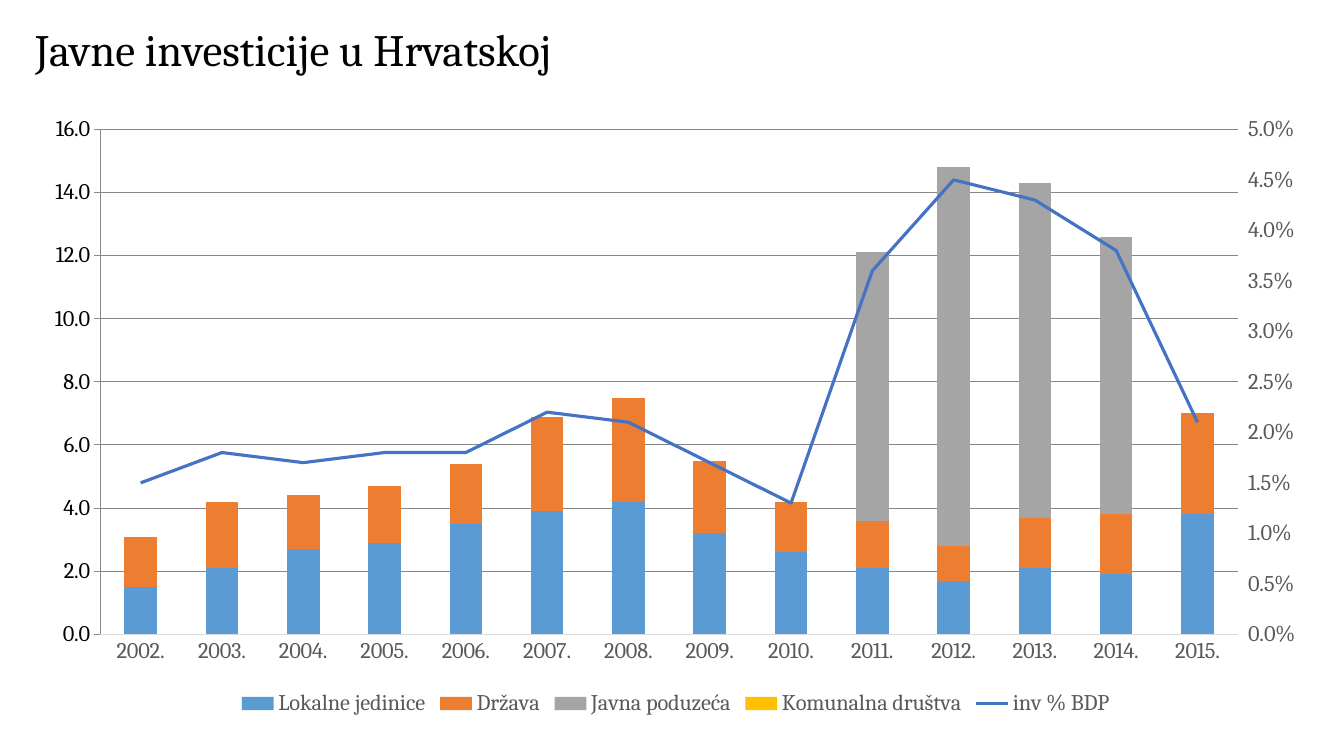
import copy

import pptx
import pptx.chart.axis
import pptx.chart.data
import pptx.dml.color
import pptx.enum.chart
import pptx.enum.text
import pptx.oxml
import pptx.oxml.ns
import pptx.util

Cm, Pt = pptx.util.Cm, pptx.util.Pt
RGB = pptx.dml.color.RGBColor
XL = pptx.enum.chart
qn = pptx.oxml.ns.qn

BLACK = RGB(0x00, 0x00, 0x00)
GRAY = RGB(0x59, 0x59, 0x59)
GRID = RGB(0xD9, 0xD9, 0xD9)
LINE = RGB(0x44, 0x72, 0xC4)
FONT = "Cambria"

YEARS = [f"{year}." for year in range(2002, 2016)]
# Stacked columns: name, fill colour, values
COLUMNS = [
    ("Lokalne jedinice", RGB(0x5B, 0x9B, 0xD5),
     [1.5, 2.1, 2.7, 2.9, 3.5, 3.9, 4.2, 3.2, 2.6, 2.1, 1.7, 2.1, 1.9, 3.8]),
    ("Država", RGB(0xED, 0x7D, 0x31),
     [1.6, 2.1, 1.7, 1.8, 1.9, 3, 3.3, 2.3, 1.6, 1.5, 1.1, 1.6, 1.9, 3.2]),
    ("Javna poduzeća", RGB(0xA5, 0xA5, 0xA5),
     [0] * 9 + [8.5, 12, 10.6, 8.8, 0]),
    ("Komunalna društva", RGB(0xFF, 0xC0, 0x00), [None] * len(YEARS)),
]
GDP_SHARE = [0.015, 0.018, 0.017, 0.018, 0.018, 0.022, 0.021,
             0.017, 0.013, 0.036, 0.045, 0.043, 0.038, 0.021]

LINE_CHART = f"""<c:lineChart {pptx.oxml.ns.nsdecls("c")}>
  <c:grouping val="standard"/><c:varyColors val="0"/>
  <c:marker val="1"/><c:axId val="5001"/><c:axId val="5002"/>
</c:lineChart>"""
PLOT_LAYOUT = f"""<c:layout {pptx.oxml.ns.nsdecls("c")}><c:manualLayout>
  <c:layoutTarget val="inner"/><c:xMode val="edge"/><c:yMode val="edge"/>
  <c:x val="0.05"/><c:y val="0.04"/><c:w val="0.89"/><c:h val="0.82"/>
</c:manualLayout></c:layout>"""


def apply(obj, values):
    for name, value in values.items():
        setattr(obj, name, value)


def format_font(font, size, color):
    apply(font, {"name": FONT, "size": Pt(size), "bold": False})
    font.color.rgb = color


def remove_children(parent, tag):
    for child in parent.findall(qn(tag)):
        parent.remove(child)


def add_title(s, left, top, width, height):
    sp = s.shapes.title
    apply(sp, {"left": left, "top": top, "width": width, "height": height})
    tf = sp.text_frame
    tf.text = "Javne investicije u Hrvatskoj"
    apply(tf, {"vertical_anchor": pptx.enum.text.MSO_ANCHOR.MIDDLE,
               "word_wrap": True})
    p = tf.paragraphs[0]
    apply(p, {"alignment": pptx.enum.text.PP_ALIGN.LEFT, "line_spacing": 0.9})
    format_font(p.runs[0].font, 32, BLACK)


def move_last_series_to_line(chart):
    """Turn the last column series into a line and return its value axis."""
    area = chart._chartSpace.find(f"{qn('c:chart')}/{qn('c:plotArea')}")
    bars = area.find(qn("c:barChart"))
    line = pptx.oxml.parse_xml(LINE_CHART)
    ser = bars.findall(qn("c:ser"))[-1]
    remove_children(ser, "c:invertIfNegative")
    line.find(qn("c:varyColors")).addnext(ser)
    bars.addnext(line)

    # Second pair of axes, with the category axis hidden
    cat, val = (copy.deepcopy(area.find(qn(tag)))
                for tag in ("c:catAx", "c:valAx"))
    for ax, own, other in ((cat, "5001", "5002"), (val, "5002", "5001")):
        ax.find(qn("c:axId")).set("val", own)
        ax.find(qn("c:crossAx")).set("val", other)
    val.find(qn("c:axPos")).set("val", "r")
    val.find(qn("c:crosses")).set("val", "max")
    area.find(qn("c:valAx")).addnext(val)
    val.addnext(cat)
    pptx.chart.axis.CategoryAxis(cat).visible = False

    # Fixed plot area
    remove_children(area, "c:layout")
    area.insert(0, pptx.oxml.parse_xml(PLOT_LAYOUT))
    return pptx.chart.axis.ValueAxis(val)


def format_axis(axis, tick, number_format=None, scale=None):
    apply(axis, {"major_tick_mark": tick,
                 "minor_tick_mark": XL.XL_TICK_MARK.NONE})
    format_font(axis.tick_labels.font, 16, GRAY)
    axis.format.line.fill.background()
    if number_format:
        apply(axis.tick_labels, {"number_format": number_format,
                                 "number_format_is_linked": False})
        apply(axis, dict(zip(
            ("minimum_scale", "maximum_scale", "major_unit"), scale)))


def format_rule(line):
    line.color.rgb = GRID
    line.width = Pt(0.75)


def add_investment_chart(s, left, top, width, height):
    data = pptx.chart.data.CategoryChartData(number_format="#,##0.0")
    data.categories = YEARS
    for name, _, values in COLUMNS:
        data.add_series(name, values)
    data.add_series("inv % BDP", GDP_SHARE, number_format="0.0%")
    chart = s.shapes.add_chart(XL.XL_CHART_TYPE.COLUMN_STACKED,
                               left, top, width, height, data).chart
    chart.has_title = False
    format_font(chart.font, 16, BLACK)
    right_axis = move_last_series_to_line(chart)

    # Series
    columns, line = chart.plots
    apply(columns, {"gap_width": 150, "overlap": 100,
                    "vary_by_categories": False})
    for series, (_, color, _) in zip(columns.series, COLUMNS):
        series.format.fill.solid()
        series.format.fill.fore_color.rgb = color
    share = line.series[0]
    share.smooth = False
    share.marker.style = XL.XL_MARKER_STYLE.NONE
    share.format.line.color.rgb = LINE
    share.format.line.width = Pt(2.25)

    # Axes
    tick = XL.XL_TICK_MARK
    format_axis(chart.category_axis, tick.NONE)
    format_axis(chart.value_axis, tick.NONE, "#,##0.0", (0, 16, 2))
    format_axis(right_axis, tick.OUTSIDE, "0.0%", (0, 0.05, 0.005))
    right_axis.has_major_gridlines = False
    format_rule(chart.category_axis.format.line)
    format_rule(chart.value_axis.major_gridlines.format.line)

    # Legend
    chart.has_legend = True
    apply(chart.legend, {"position": XL.XL_LEGEND_POSITION.BOTTOM,
                         "include_in_layout": False})
    format_font(chart.legend.font, 16, GRAY)


def main():
    prs = pptx.Presentation()
    apply(prs, {"slide_width": Cm(33.87), "slide_height": Cm(19.05)})
    s = prs.slides.add_slide(prs.slide_layouts.get_by_name("Title Only"))
    add_title(s, Cm(0.64), Cm(0), Cm(32.26), Cm(2.64))
    add_investment_chart(s, Cm(0.91), Cm(2.64), Cm(32.23), Cm(15.52))
    prs.save("out.pptx")


if __name__ == "__main__":
    main()
